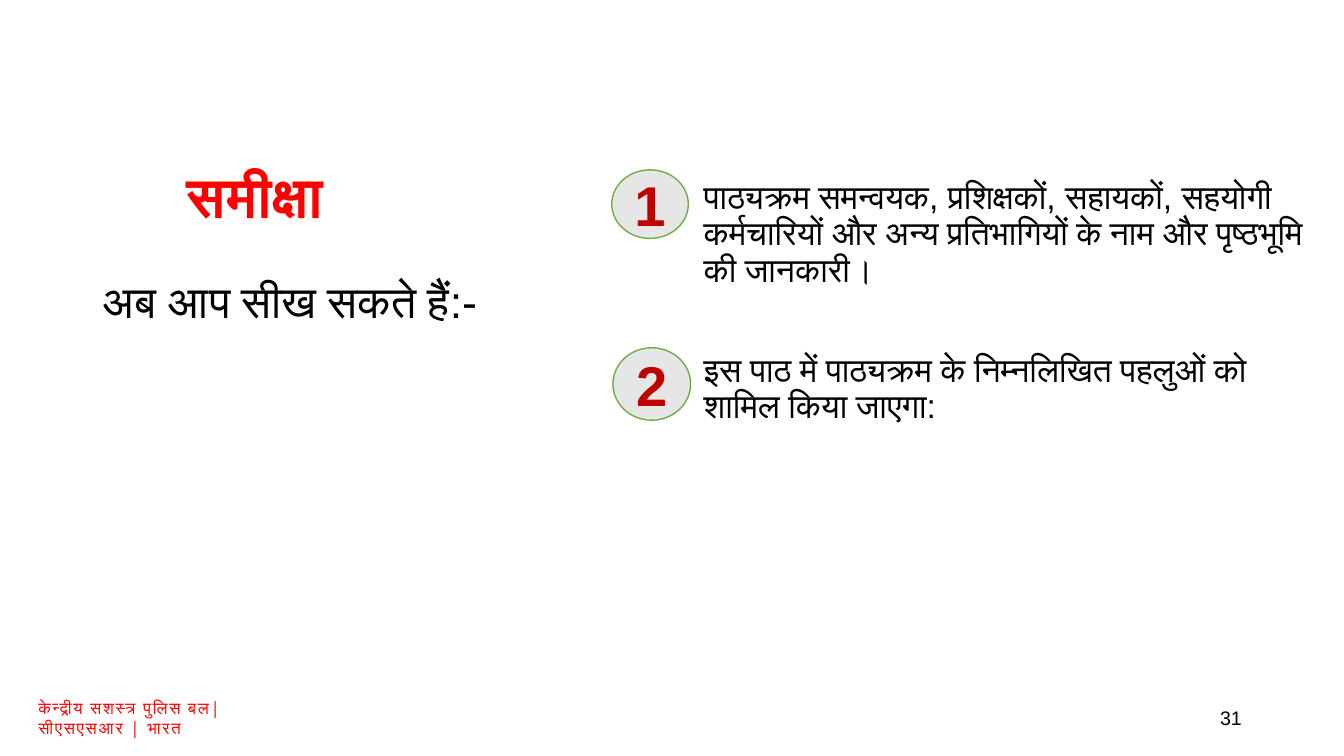
from lxml import etree
from pptx import Presentation
from pptx.dml import color
from pptx.enum import shapes, text
from pptx.oxml import ns
from pptx.util import Pt

HUES = {"red": "FF0000", "dark": "C00000", "black": "000000",
        "white": "FFFFFF", "gray": "E7E6E6", "green": "70AD47"}
ALIGN = text.PP_ALIGN


class Page:
    def __init__(self, deck):
        self.slide = deck.slides.add_slide(deck.slide_layouts[1])
        self.items = self.slide.shapes

    def hue(self, name):
        return color.RGBColor.from_string(HUES[name])

    def paint(self, shape, name):
        shape.fill.solid()
        shape.fill.fore_color.rgb = self.hue(name)

    def place(self, shape, box):
        shape.left, shape.top, shape.width, shape.height = map(Pt, box)

    def style(self, para, size, tint="black", face="Arial", bold=False,
              align=ALIGN.LEFT):
        para.alignment = align
        font = para.font
        font.size, font.name, font.bold = Pt(size), face, bold
        font.color.rgb = self.hue(tint)
        return font

    def title(self, words, box):
        shape = self.items.title
        self.place(shape, box)
        self.paint(shape, "white")
        frame = shape.text_frame
        frame.text = words
        frame.auto_size = text.MSO_AUTO_SIZE.NONE
        frame.vertical_anchor = text.MSO_ANCHOR.MIDDLE
        para = frame.paragraphs[0]
        para.line_spacing = 0.9
        self.style(para, 40, "red", "Open Sans", True)

    def list(self, lines, box, gap):
        shape = self.slide.placeholders[1]
        self.place(shape, box)
        frame = shape.text_frame
        frame.text = "\n".join(lines)
        frame.auto_size = text.MSO_AUTO_SIZE.NONE
        for i, para in enumerate(frame.paragraphs):
            props = para._p.get_or_add_pPr()
            props.set("marL", "0")
            props.set("indent", "0")
            etree.SubElement(props, ns.qn("a:buNone"))
            para.line_spacing = 0.9
            para.space_before = Pt(gap if i else 0)
            self.style(para, 24)

    def label(self, words, box, size, inset=None, track=None, **look):
        shape = self.items.add_textbox(*map(Pt, box))
        frame = shape.text_frame
        frame.word_wrap = True
        frame.text = words
        if inset is not None:
            frame.margin_left = frame.margin_right = Pt(inset)
            frame.margin_top = frame.margin_bottom = Pt(inset)
        font = self.style(frame.paragraphs[0], size, **look)
        if track:
            font._element.set("spc", str(track))

    def badge(self, words, box):
        shape = self.items.add_shape(shapes.MSO_SHAPE.OVAL, *map(Pt, box))
        shape.shadow.inherit = False
        self.paint(shape, "gray")
        shape.line.color.rgb = self.hue("green")
        shape.line.width = Pt(1)
        frame = shape.text_frame
        frame.text = words
        frame.vertical_anchor = text.MSO_ANCHOR.MIDDLE
        self.style(frame.paragraphs[0], 40, "dark", bold=True,
                   align=ALIGN.CENTER)


def main():
    deck = Presentation()
    deck.slide_width, deck.slide_height = Pt(960), Pt(540)
    page = Page(deck)
    page.title("समीक्षा", (126, 108, 231, 68.5))
    page.list([
        "पाठ्यक्रम समन्वयक, प्रशिक्षकों, सहायकों, सहयोगी कर्मचारियों और अन्य "
        "प्रतिभागियों के नाम और पृष्ठभूमि की जानकारी।",
        "इस पाठ में पाठ्यक्रम के निम्नलिखित पहलुओं को शामिल किया जाएगा:",
    ], (495.4, 125.3, 448.6, 324), 46)
    page.label("अब आप सीख सकते हैं:-", (66.2, 192.2, 351.4, 85), 32)
    page.badge("1", (437, 121.3, 54.7, 49))
    page.badge("2", (437.8, 248.4, 55.5, 51.8))
    page.label("केन्द्रीय सशस्त्र पुलिस बल|सीएसएसआर | भारत",
               (24.5, 495.4, 184.3, 35.3), 12, inset=2.9, track=120,
               tint="red", face="Open Sans")
    page.label("31", (678.2, 500.4, 216, 28.8), 14, align=ALIGN.RIGHT)
    deck.save("out.pptx")


if __name__ == "__main__":
    main()
